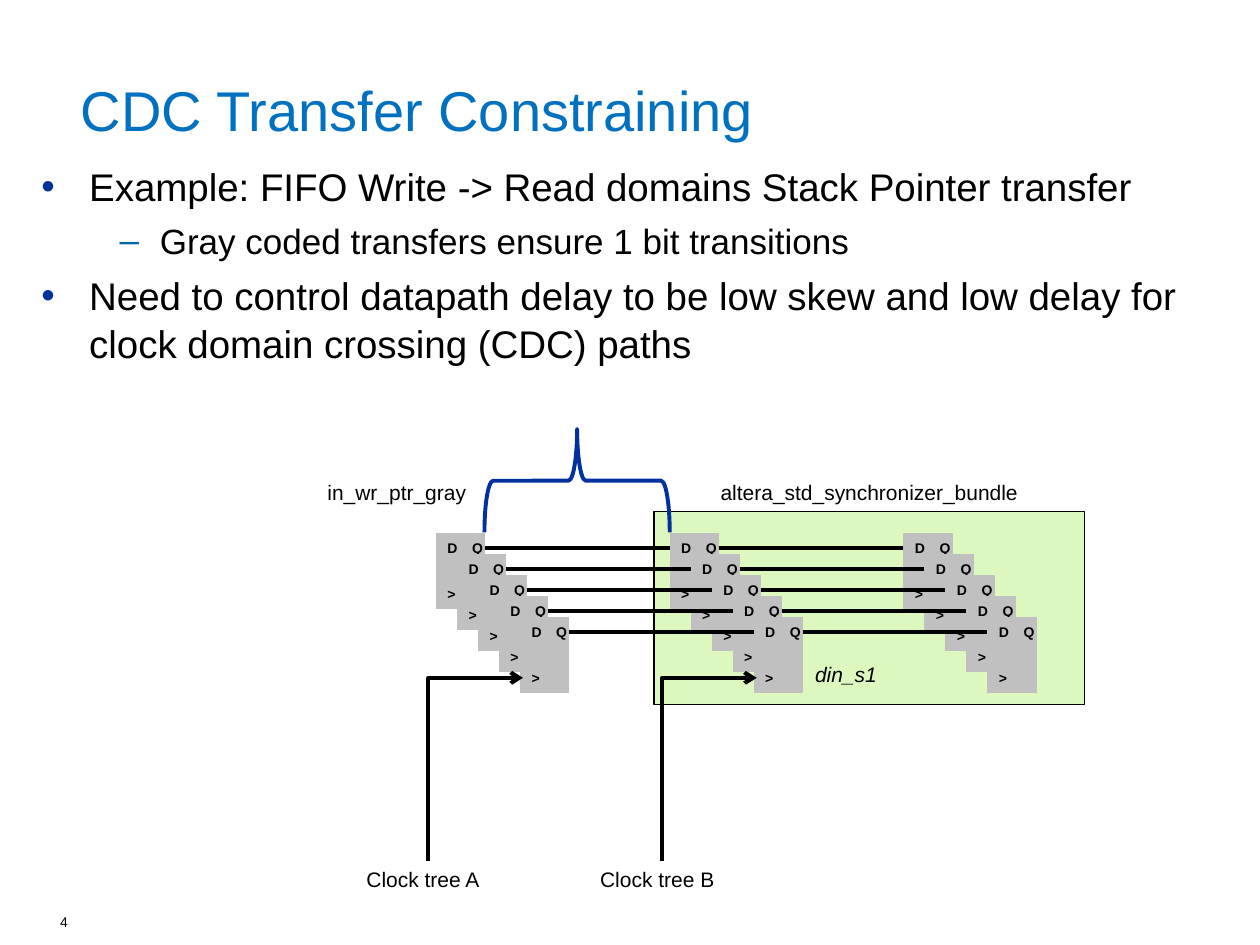
from pptx import Presentation
from pptx import util as u
from pptx.dml.color import RGBColor
from pptx.enum import shapes, text
from pptx.oxml.ns import qn
from lxml import etree

BLACK = "000000"
STAGE_LEFTS = (3.46, 5.315, 7.17)
STAGE_TOP = 4.23
BIT_COUNT = 5
BIT_STEP = 1 / 6
FLOP_W, FLOP_H = 0.39, 0.6
PIN_W, PIN_H = 0.19, 0.24
PINS = (("D", 0, 0), ("Q", 0.195, 0), (">", 0, 0.37))


def color(hex_value):
    return RGBColor.from_string(hex_value)


def box(*lengths):
    return [u.Inches(length) for length in lengths]


def add_xml(parent, tag, **attributes):
    return etree.SubElement(parent, qn(tag), attributes)


def format_font(font, size, hex_value=BLACK, **styles):
    values = {"name": "Arial", "size": u.Pt(size), **styles}
    for attribute, value in values.items():
        setattr(font, attribute, value)
    font.color.rgb = color(hex_value)


def add_label(parent, wording, place, size=12, align=text.PP_ALIGN.LEFT,
              wrap=True, grow=True, **styles):
    frame = parent.add_textbox(*box(*place)).text_frame
    frame.word_wrap = wrap
    frame.auto_size = (text.MSO_AUTO_SIZE.SHAPE_TO_FIT_TEXT if grow
                       else text.MSO_AUTO_SIZE.NONE)
    paragraph = frame.paragraphs[0]
    paragraph.alignment = align
    run = paragraph.add_run()
    run.text = wording
    format_font(run.font, size, **styles)


def add_block(parent, preset, place, fill=None, line=None, width=0.75):
    block = parent.add_shape(preset, *box(*place))
    block.shadow.inherit = False
    if fill:
        block.fill.solid()
        block.fill.fore_color.rgb = color(fill)
    else:
        block.fill.background()
    if line:
        block.line.color.rgb = color(line)
        block.line.width = u.Pt(width)
    else:
        block.line.fill.background()
    return block


def add_wire(parent, start, end, kind=shapes.MSO_CONNECTOR.STRAIGHT):
    wire = parent.add_connector(kind, *box(*start, *end))
    wire.line.color.rgb = color(BLACK)
    wire.line.width = u.Pt(2.25)
    add_xml(wire._element.spPr, "a:effectLst")
    return wire


def add_clock(parent, start, end):
    """Clock wire that runs up from start, then right to an arrow at end."""
    mid_x, mid_y = (start[0] + end[0]) / 2, (start[1] + end[1]) / 2
    half_w, half_h = (start[1] - end[1]) / 2, (end[0] - start[0]) / 2
    # Placed as drawn before its quarter turn
    clock = add_wire(parent, (mid_x + half_w, mid_y + half_h),
                     (mid_x - half_w, mid_y - half_h),
                     shapes.MSO_CONNECTOR.ELBOW)
    properties = clock._element.spPr
    properties.find(qn("a:xfrm")).set("rot", "5400000")
    properties.find(qn("a:prstGeom")).set("prst", "bentConnector2")
    add_xml(clock.line._get_or_add_ln(), "a:tailEnd", type="arrow")


def add_flop(parent, left, top):
    flop = parent.add_group_shape().shapes
    add_block(flop, shapes.MSO_SHAPE.FLOWCHART_PROCESS,
              (left, top, FLOP_W, FLOP_H), "C0C0C0")
    for pin, dx, dy in PINS:
        add_label(flop, pin, (left + dx, top + dy, PIN_W, PIN_H), 8,
                  text.PP_ALIGN.CENTER, bold=True)


def add_stage(parent, left):
    for bit in range(BIT_COUNT):
        add_flop(parent, left + bit * BIT_STEP, STAGE_TOP + bit * BIT_STEP)


def add_bus(parent, left, next_left):
    for bit in range(BIT_COUNT):
        shift = bit * BIT_STEP
        y = STAGE_TOP + 0.12 + shift
        add_wire(parent, (left + FLOP_W + shift, y), (next_left + shift, y))


def set_title(slide, wording):
    title = slide.shapes.title
    title.left, title.top, title.width, title.height = box(0.54, 0.44, 9.18, 0.85)
    title.text_frame.text = wording
    title.text_frame.vertical_anchor = text.MSO_ANCHOR.MIDDLE
    paragraph = title.text_frame.paragraphs[0]
    paragraph.alignment = text.PP_ALIGN.LEFT
    format_font(paragraph.runs[0].font, 32, "0070C0")


def add_bullets(parent, points):
    styles = ((22, 0.38, 0.38, "•", "003399"), (20, 0.94, 0.32, "–", "0067A6"))
    frame = parent.add_textbox(*box(0.23, 1.2, 9.49, 5.08)).text_frame
    frame.word_wrap = True
    frame.margin_top = u.Inches(0.08)
    for index, (level, wording) in enumerate(points):
        size, indent, hanging, mark, mark_color = styles[level]
        paragraph = frame.paragraphs[0] if index == 0 else frame.add_paragraph()
        properties = paragraph._p.get_or_add_pPr()
        properties.set("marL", str(u.Inches(indent)))
        properties.set("indent", str(-u.Inches(hanging)))
        add_xml(add_xml(properties, "a:buClr"), "a:srgbClr", val=mark_color)
        add_xml(properties, "a:buFont", typeface="Arial")
        add_xml(properties, "a:buChar", char=mark)
        paragraph.level = level
        paragraph.line_spacing = 1.04
        if index:
            paragraph.space_before = u.Pt(5)
        run = paragraph.add_run()
        run.text = wording
        format_font(run.font, size)


def main():
    deck = Presentation()
    deck.slide_width, deck.slide_height = box(10, 7.5)
    slide = deck.slides.add_slide(deck.slide_layouts[5])
    canvas = slide.shapes
    source, first_sync, second_sync = STAGE_LEFTS

    set_title(slide, "CDC Transfer Constraining")
    add_block(canvas, shapes.MSO_SHAPE.RECTANGLE, (5.19, 4.06, 3.42, 1.53),
              "DCF8BF", BLACK)
    add_label(canvas, "4", (0.38, 7.2, 0.76, 0.31), 8, grow=False)
    add_bullets(canvas, (
        (0, "Example: FIFO Write -> Read domains Stack Pointer transfer"),
        (1, "Gray coded transfers ensure 1 bit transitions"),
        (0, "Need to control datapath delay to be low skew and low delay for "
            "clock domain crossing (CDC) paths"),
    ))

    add_stage(canvas, source)
    add_stage(canvas, first_sync)
    add_bus(canvas, source, first_sync)
    add_stage(canvas, second_sync)
    add_bus(canvas, first_sync, second_sync)

    add_label(canvas, "in_wr_ptr_gray", (2.5, 3.76, 1.74, 0.3))
    add_label(canvas, "altera_std_synchronizer_bundle",
              (5.19, 3.76, 3.42, 0.3), align=text.PP_ALIGN.CENTER)
    for name, stage_left in (("A", source), ("B", first_sync)):
        trunk = stage_left - 0.06
        add_label(canvas, f"Clock tree {name}", (trunk - 0.59, 6.83, 1.17, 0.3))
        add_clock(canvas, (trunk, 6.83), (trunk + 0.75, 5.38))

    brace = add_block(canvas, shapes.MSO_SHAPE.LEFT_BRACE,
                      (4.17, 3.08, 0.82, 1.47), line="00319E", width=2.25)
    brace.rotation = 90
    add_label(canvas, "din_s1", (6.37, 5.2, 0.69, 0.3), wrap=False, italic=True)

    deck.save("out.pptx")


if __name__ == "__main__":
    main()
